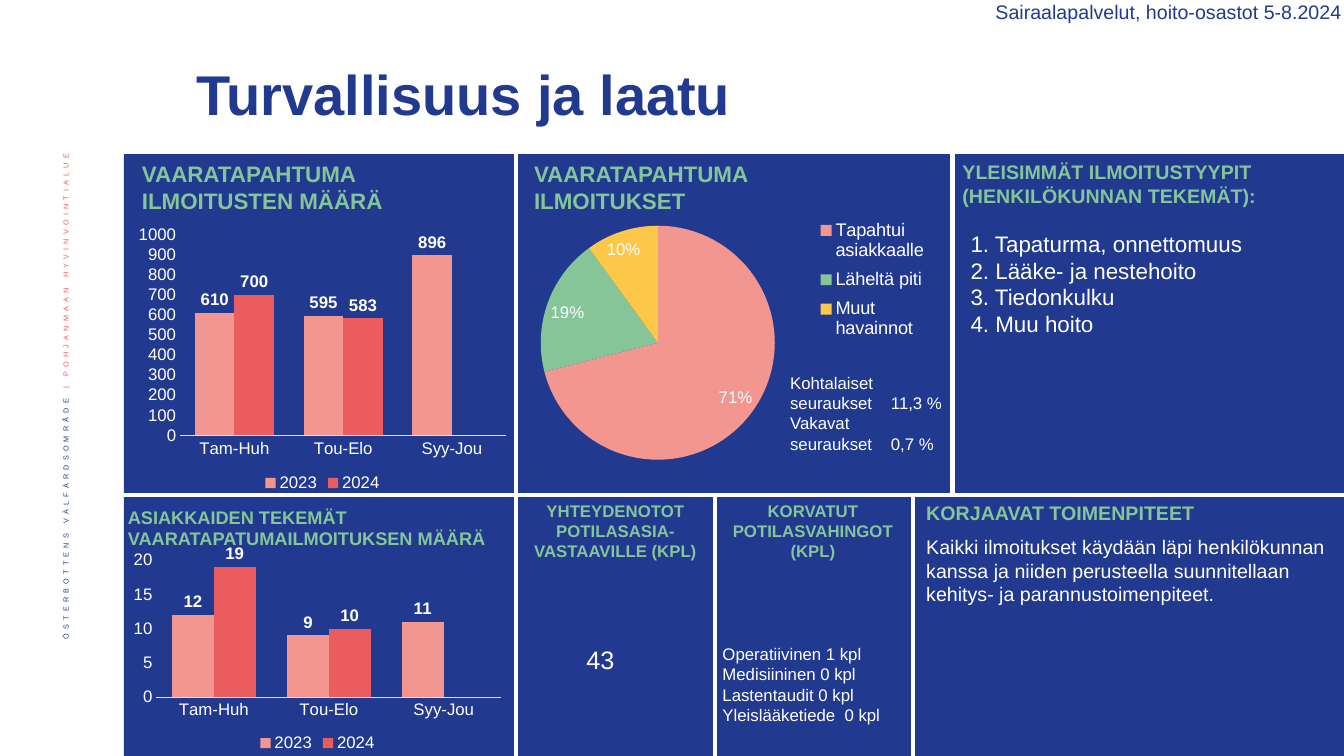
from lxml import etree
from pptx import Presentation
from pptx.chart.data import CategoryChartData
from pptx.dml.color import RGBColor
from pptx.enum.chart import XL_CHART_TYPE, XL_LABEL_POSITION, XL_LEGEND_POSITION, XL_TICK_MARK
from pptx.enum.shapes import MSO_CONNECTOR, MSO_SHAPE
from pptx.enum.text import MSO_ANCHOR, MSO_AUTO_SIZE, PP_ALIGN
from pptx.oxml.ns import qn
from pptx.util import Pt

LEFT, CENTER, RIGHT = PP_ALIGN.LEFT, PP_ALIGN.CENTER, PP_ALIGN.RIGHT
MIDDLE = MSO_ANCHOR.MIDDLE
NO_AUTOSIZE = MSO_AUTO_SIZE.NONE
COLUMN, PIE = XL_CHART_TYPE.COLUMN_CLUSTERED, XL_CHART_TYPE.PIE
LEGEND_BOTTOM, LEGEND_RIGHT = XL_LEGEND_POSITION.BOTTOM, XL_LEGEND_POSITION.RIGHT
BEST_FIT, OUTSIDE_END = XL_LABEL_POSITION.BEST_FIT, XL_LABEL_POSITION.OUTSIDE_END
NO_TICK = XL_TICK_MARK.NONE

FONT = "Arial"
COLORS = {
    "navy": "213A8F", "white": "FFFFFF", "green": "85C598", "salmon": "F39690",
    "red": "EB5C5F", "yellow": "FDC84A", "axis": "D6DDF6",
}
SLIDE_WIDTH, SLIDE_HEIGHT = 960, 540
PANEL_LEFT, PANEL_TOP, ROW_SPLIT = 88.5, 110, 353.5
UPPER_SPLITS = [368.6, 680.4]
LOWER_SPLITS = [368.6, 510.5, 652.3]

TITLE = "Turvallisuus ja laatu"
ORGANISATION = [
    ("ÖSTERBOTTENS VÄLFÄRDSOMRÅDE ", "navy"),
    ("| POHJANMAAN HYVINVOINTIALUE ", "red"),
]

# (left, top, width, height), size, alignment, text
HEADINGS = [
    ((94.3, 110.9, 194.4, 46), 16, LEFT, "VAARATAPAHTUMA ILMOITUSTEN MÄÄRÄ"),
    ((374.4, 110.9, 194.4, 46), 16, LEFT, "VAARATAPAHTUMA ILMOITUKSET"),
    ((680.4, 110.9, 279.6, 41), 14, LEFT,
     "YLEISIMMÄT ILMOITUSTYYPIT (HENKILÖKUNNAN TEKEMÄT):"),
    ((84.2, 357.8, 298.8, 39), 13, LEFT,
     "ASIAKKAIDEN TEKEMÄT VAARATAPATUMAILMOITUKSEN MÄÄRÄ"),
    ((370.8, 354.2, 137.5, 51), 12, CENTER, "YHTEYDENOTOT POTILASASIA-VASTAAVILLE (KPL)"),
    ((511.9, 354.2, 137.5, 51), 12, CENTER, "KORVATUT POTILASVAHINGOT (KPL)"),
    ((654.5, 354.2, 301.7, 24.5), 14, LEFT, "KORJAAVAT TOIMENPITEET"),
]
BODY_TEXTS = [
    ((686.2, 160.6, 269.3, 106.6), 16, [
        "1. Tapaturma, onnettomuus", "2. Lääke- ja nestehoito",
        "3. Tiedonkulku", "4. Muu hoito"]),
    ((557.3, 262.8, 144.7, 70), 12, [
        "Kohtalaiset", "seuraukset\t11,3 %", "Vakavat", "seuraukset\t0,7 %"]),
    ((411.8, 456.5, 74.9, 29), 18, ["43"]),
    ((509, 456.5, 141.8, 65.5), 12, [
        "Operatiivinen 1 kpl", "Medisiininen 0 kpl",
        "Lastentaudit 0 kpl", "Yleislääketiede  0 kpl"]),
    ((654.5, 378.7, 301.7, 80), 14, [
        "Kaikki ilmoitukset käydään läpi henkilökunnan kanssa ja niiden perusteella "
        "suunnitellaan kehitys- ja parannustoimenpiteet."]),
]
PERIOD_BOX = (537.1, -3.6, 428.4, 24.5)
PERIOD = "Sairaalapalvelut, hoito-osastot 5-8.2024"

MONTHS = ["Tam-Huh", "Tou-Elo", "Syy-Jou"]
YEAR_COLORS = ["salmon", "red"]
# box, axis maximum, axis step, values by year
COLUMN_CHARTS = [
    ((93.6, 157, 273.6, 197.3), 1000, 100,
     {"2023": [610, 595, 896], "2024": [700, 583, None]}),
    ((90, 389.5, 273.6, 150.5), 20, 5,
     {"2023": [12, 9, 11], "2024": [19, 10, None]}),
]
PIE_BOX = (370.8, 142.6, 309.6, 204.5)
PIE_PLOT = {"layoutTarget": "inner", "xMode": "edge", "yMode": "edge",
            "x": 0.05, "y": 0.08, "w": 0.54, "h": 0.84}
PIE_LEGEND = {"xMode": "edge", "yMode": "edge", "x": 0.68, "y": 0.04, "w": 0.27, "h": 0.48}
PIE_SLICES = [
    ("Tapahtui asiakkaalle", 71, "salmon"),
    ("Läheltä piti", 19, "green"),
    ("Muut havainnot", 10, "yellow"),
]


def rgb(name):
    return RGBColor.from_string(COLORS[name])


def points(box):
    return [Pt(value) for value in box]


def set_font(font, size, color, bold=False):
    for name, value in {"name": FONT, "size": Pt(size), "bold": bold}.items():
        setattr(font, name, value)
    font.color.rgb = rgb(color)


def fill_solid(part, color):
    part.fill.solid()
    part.fill.fore_color.rgb = rgb(color)


def add_text(slide, box, lines, size, color, bold=False, alignment=LEFT):
    frame = slide.shapes.add_textbox(*points(box)).text_frame
    frame.word_wrap = True
    for index, line in enumerate(lines):
        paragraph = frame.paragraphs[0] if index == 0 else frame.add_paragraph()
        paragraph.alignment = alignment
        run = paragraph.add_run()
        run.text = line
        set_font(run.font, size, color, bold)


def add_organisation(slide):
    frame = slide.shapes.add_textbox(*points((30.2, 98.5, 37.4, 412.6))).text_frame
    frame.word_wrap = True
    frame.vertical_anchor = MIDDLE
    frame._txBody.bodyPr.set("vert", "vert270")
    paragraph = frame.paragraphs[0]
    paragraph.alignment, paragraph.line_spacing = RIGHT, 0.9
    for text, color in ORGANISATION:
        run = paragraph.add_run()
        run.text = text
        set_font(run.font, 9, color)
        properties = run._r.get_or_add_rPr()
        properties.set("baseline", "30000")
        properties.set("spc", "300")


def add_panel(slide):
    panel = slide.shapes.add_shape(MSO_SHAPE.RECTANGLE, *points(
        (PANEL_LEFT, PANEL_TOP, SLIDE_WIDTH - PANEL_LEFT, SLIDE_HEIGHT - PANEL_TOP)))
    panel.shadow.inherit = False
    fill_solid(panel, "navy")
    panel.line.fill.background()
    dividers = [(PANEL_LEFT, ROW_SPLIT, SLIDE_WIDTH, ROW_SPLIT)]
    dividers += [(x, PANEL_TOP, x, ROW_SPLIT) for x in UPPER_SPLITS]
    dividers += [(x, ROW_SPLIT, x, SLIDE_HEIGHT) for x in LOWER_SPLITS]
    for ends in dividers:
        divider = slide.shapes.add_connector(MSO_CONNECTOR.STRAIGHT, *points(ends))
        divider.line.width = Pt(3)
        divider.line.color.rgb = rgb("white")
        etree.SubElement(divider._element.spPr, qn("a:effectLst"))


def add_chart(slide, kind, box, categories, series, legend_position, legend_size):
    data = CategoryChartData()
    data.categories = categories
    for name, values in series.items():
        data.add_series(name, values)
    chart = slide.shapes.add_chart(kind, *points(box), data).chart
    set_font(chart.font, 10, "navy")
    chart.has_title = False
    chart.has_legend = True
    chart.legend.position = legend_position
    chart.legend.include_in_layout = False
    set_font(chart.legend.font, legend_size, "white")
    return chart


def add_column_chart(slide, box, maximum, step, series):
    chart = add_chart(slide, COLUMN, box, MONTHS, series, LEGEND_BOTTOM, 12)
    plot = chart.plots[0]
    plot.gap_width, plot.overlap, plot.vary_by_categories = 75, 0, False
    for axis in (chart.category_axis, chart.value_axis):
        axis.major_tick_mark = axis.minor_tick_mark = NO_TICK
        axis.has_major_gridlines = False
        set_font(axis.tick_labels.font, 12, "white")
    chart.category_axis.format.line.color.rgb = rgb("axis")
    chart.category_axis.format.line.width = Pt(0.75)
    value_axis = chart.value_axis
    value_axis.format.line.fill.background()
    value_axis.minimum_scale, value_axis.maximum_scale = 0, maximum
    value_axis.major_unit = step
    for year, color in zip(plot.series, YEAR_COLORS):
        fill_solid(year.format, color)
        labels = year.data_labels
        labels.show_value, labels.position = True, OUTSIDE_END
        set_font(labels.font, 12, "white", True)


def place_manually(parent, position, settings):
    """Give a chart part a fixed layout, inserted as the child at position."""
    for layout in parent.findall(qn("c:layout")):
        parent.remove(layout)
    layout = etree.Element(qn("c:layout"))
    parent.insert(position, layout)
    manual = etree.SubElement(layout, qn("c:manualLayout"))
    for name, value in settings.items():
        etree.SubElement(manual, qn("c:" + name)).set("val", str(value))


def add_pie_chart(slide):
    names, shares, colors = zip(*PIE_SLICES)
    chart = add_chart(slide, PIE, PIE_BOX, names, {"Series 1": shares}, LEGEND_RIGHT, 13)
    pie = chart.plots[0]
    for index, color in enumerate(colors):
        fill_solid(pie.series[0].points[index].format, color)
    labels = pie.series[0].data_labels
    labels.show_value, labels.show_percentage, labels.position = False, True, BEST_FIT
    set_font(labels.font, 12, "white")
    chart_element = chart._chartSpace.chart
    place_manually(chart_element.plotArea, 0, PIE_PLOT)
    legend = chart_element.find(qn("c:legend"))
    after_position = len(legend.findall(qn("c:legendPos")))
    place_manually(legend, after_position, PIE_LEGEND)


def add_title(slide):
    title = slide.shapes.title
    title.left, title.top, title.width, title.height = points((133.2, 33.8, 718.6, 71.3))
    frame = title.text_frame
    frame.text = TITLE
    frame.auto_size, frame.vertical_anchor = NO_AUTOSIZE, MIDDLE
    paragraph = frame.paragraphs[0]
    paragraph.alignment, paragraph.line_spacing = LEFT, 0.9
    set_font(paragraph.runs[0].font, 40, "navy", True)


def main():
    presentation = Presentation()
    presentation.slide_width, presentation.slide_height = Pt(SLIDE_WIDTH), Pt(SLIDE_HEIGHT)
    slide = presentation.slides.add_slide(presentation.slide_layouts[5])
    add_title(slide)
    add_organisation(slide)
    add_panel(slide)
    for chart in COLUMN_CHARTS:
        add_column_chart(slide, *chart)
    add_pie_chart(slide)
    for box, size, alignment, heading in HEADINGS:
        add_text(slide, box, [heading], size, "green", True, alignment)
    for box, size, lines in BODY_TEXTS:
        add_text(slide, box, lines, size, "white")
    add_text(slide, PERIOD_BOX, [PERIOD], 14, "navy", alignment=RIGHT)
    presentation.save("out.pptx")


if __name__ == "__main__":
    main()
